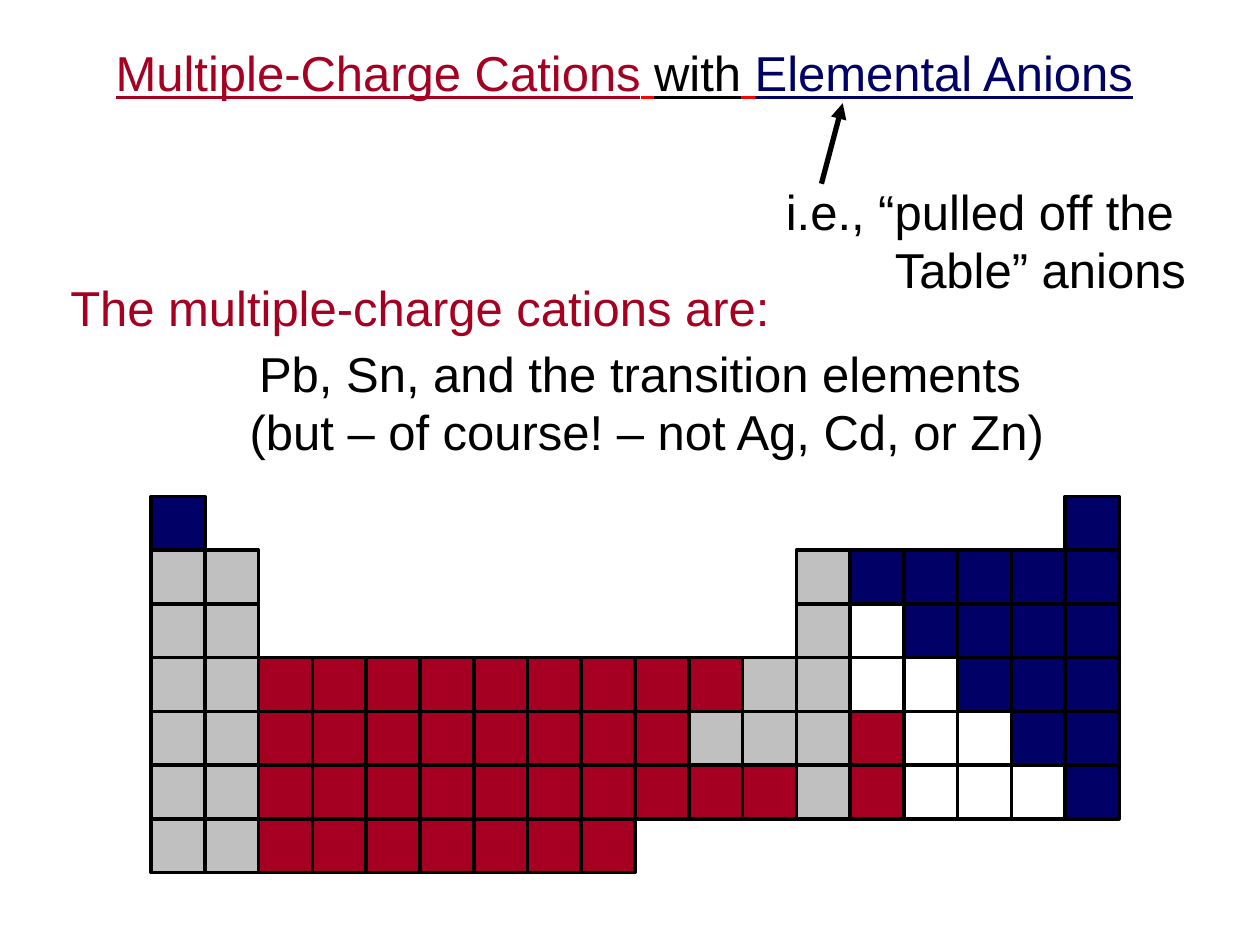
from lxml import etree
from pptx import Presentation
from pptx import util as u
from pptx.dml.color import RGBColor
from pptx.enum import shapes, text
from pptx.oxml.ns import qn

RED, NAVY, GREY, BLACK = "A50021", "000066", "C0C0C0", "000000"
FILLS = {"R": RED, "B": NAVY, "G": GREY}
PERIODS = [
    "B" + " " * 16 + "B",
    "GG" + " " * 10 + "GBBBBB",
    "GG" + " " * 10 + "GWBBBB",
    "GG" + "R" * 9 + "GGWWBBB",
    "GG" + "R" * 8 + "GGGRWWBB",
    "GG" + "R" * 10 + "GRWWWB",
    "GG" + "R" * 7,
]


def rgb(value):
    return RGBColor.from_string(value)


def add_text(s, lines, x, y, w, h, wrap=False, align=text.PP_ALIGN.LEFT, indents=(0, 0),
             size=28, font="Arial", underline=None):
    sp = s.shapes.add_textbox(u.Pt(x), u.Pt(y), u.Pt(w), u.Pt(h))
    tf = sp.text_frame
    tf.word_wrap = wrap
    tf.vertical_anchor = text.MSO_ANCHOR.MIDDLE
    for i, (runs, indent) in enumerate(zip(lines, indents)):
        p = tf.add_paragraph() if i else tf.paragraphs[0]
        p.alignment = align
        if indent:
            p._p.get_or_add_pPr().set("marL", str(u.Pt(indent)))
        for words, color in runs:
            r = p.add_run()
            r.text = words
            r.font.size, r.font.name, r.font.underline = u.Pt(size), font, underline
            r.font.color.rgb = rgb(color)
    return sp


def add_title(s, x, y, w, h):
    runs = [("Multiple-Charge Cations", RED), (" ", "FF0000"), ("with", BLACK),
            (" ", "FF0000"), ("Elemental Anions", NAVY)]
    add_text(s, [runs], x, y, w, h, underline=True)


def add_anion_note(s, x, y, w, h):
    add_text(s, [[("i.e., “pulled off the", BLACK)], [("Table” anions", BLACK)]],
             x, y + 41, w, h - 41, wrap=True, indents=(0, 62.25))
    arrow = s.shapes.add_connector(shapes.MSO_CONNECTOR.STRAIGHT, u.Pt(x + 27.4),
                                   u.Pt(y + 46), u.Pt(x + 39.6), u.Pt(y))
    arrow.line.color.rgb = rgb(BLACK)
    arrow.line.width = u.Pt(3)
    etree.SubElement(arrow.line._get_or_add_ln(), qn("a:tailEnd"), type="triangle")
    etree.SubElement(arrow._element.spPr, qn("a:effectLst"))


def add_cation_list(s, x, y, w, h):
    add_text(s, [[("The multiple-charge cations are:", RED)]], x, y, 423.4, 41)
    lines = [[("Pb, Sn, and the transition elements", BLACK)],
             [("(but – of course! – not Ag, Cd, or Zn)", BLACK)]]
    add_text(s, lines, x + 87, y + 36.7, w - 87, h - 36.7, wrap=True,
             align=text.PP_ALIGN.CENTER, indents=(0, 7.8))


def add_periodic_table(s, x, y, w, h):
    cw, ch = w / 18, h / len(PERIODS)
    for row, period in enumerate(PERIODS):
        for col, kind in enumerate(period):
            if kind == " ":
                continue
            sp = s.shapes.add_shape(shapes.MSO_SHAPE.RECTANGLE, u.Pt(x + col * cw),
                                    u.Pt(y + row * ch), u.Pt(cw), u.Pt(ch))
            sp.shadow.inherit = False
            sp.line.color.rgb = rgb(BLACK)
            sp.line.width = u.Pt(2)
            if kind in FILLS:
                sp.fill.solid()
                sp.fill.fore_color.rgb = rgb(FILLS[kind])
            else:
                sp.fill.background()


def main():
    prs = Presentation()
    prs.slide_width, prs.slide_height = u.Pt(720), u.Pt(540)
    s = prs.slides.add_slide(prs.slide_layouts[6])
    add_title(s, 59, 20.9, 599, 41)
    add_cation_list(s, 33.1, 154.8, 578.2, 113)
    add_anion_note(s, 442, 59, 254.2, 115.2)
    add_periodic_table(s, 86.4, 283.7, 553, 215)
    prs.save("out.pptx")


if __name__ == "__main__":
    main()
